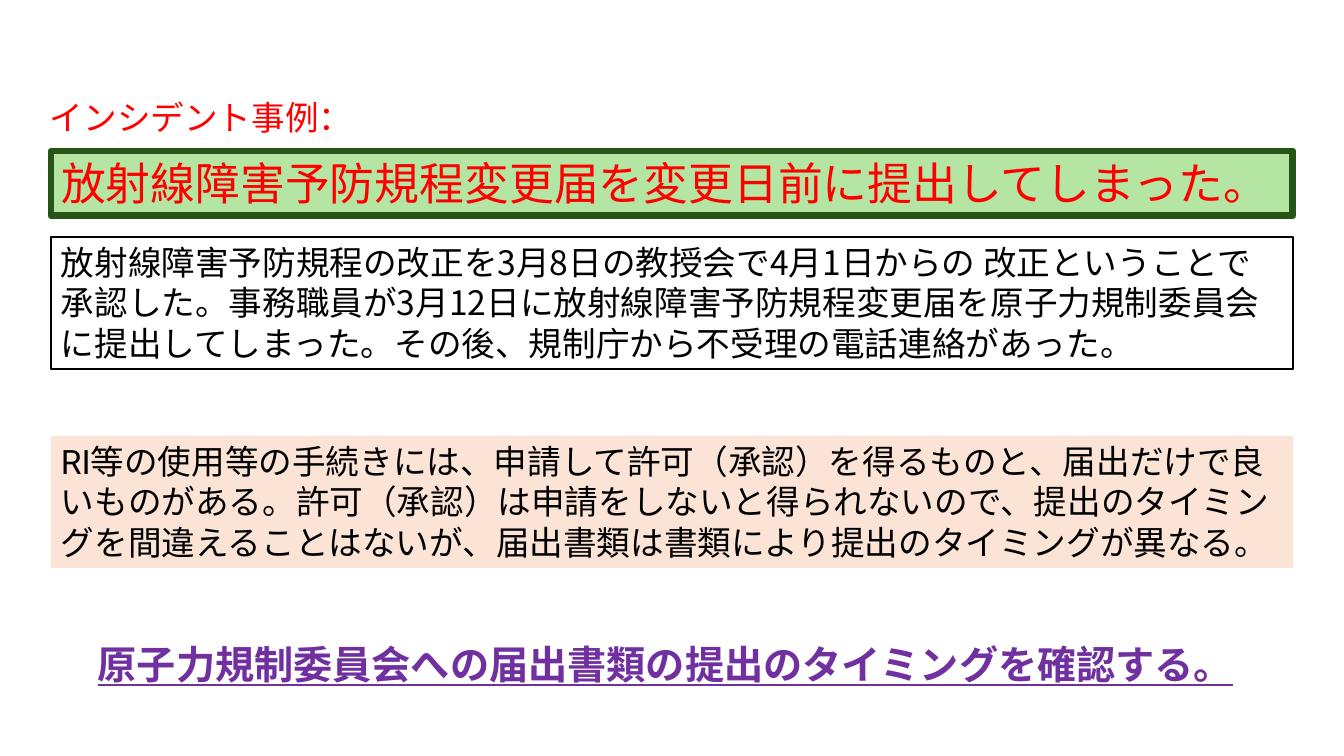
from pptx import Presentation
from pptx.dml.color import RGBColor
from pptx.enum.shapes import MSO_SHAPE
from pptx.enum.text import MSO_ANCHOR, MSO_AUTO_SIZE, PP_ALIGN
from pptx.oxml.ns import qn
from pptx.util import Emu, Pt

EMU_PER_PX = 914400 / 100.8
LINE_HEIGHT = 1.2
COLORS = {
    "alert": "FF0000",
    "headline_fill": "B4E5A2",
    "headline_edge": "275417",
    "ink": "000000",
    "advice_fill": "FBE3D6",
    "conclusion": "7030A0",
}


def px(length):
    return Emu(round(length * EMU_PER_PX))


def rgb(name):
    return RGBColor.from_string(COLORS[name])


class IncidentSlide:
    font = "Noto Sans CJK JP"

    def __init__(self, presentation):
        self.slide = presentation.slides.add_slide(presentation.slide_layouts[5])

    def set_text(self, shape, text, size, color, wrap=True, latin=font, **emphasis):
        frame = shape.text_frame
        frame_format = {
            "word_wrap": wrap,
            "auto_size": MSO_AUTO_SIZE.NONE,
            "vertical_anchor": MSO_ANCHOR.TOP,
            "margin_left": Pt(7.2),
            "margin_right": Pt(7.2),
            "margin_top": Pt(3.6),
            "margin_bottom": Pt(3.6),
        }
        for name, value in frame_format.items():
            setattr(frame, name, value)
        paragraph = frame.paragraphs[0]
        paragraph.alignment = PP_ALIGN.LEFT
        paragraph.line_spacing = Pt(size * LINE_HEIGHT)
        run = paragraph.add_run()
        run.text = text
        font_format = {"size": Pt(size), "name": latin, **emphasis}
        for name, value in font_format.items():
            setattr(run.font, name, value)
        run.font.color.rgb = rgb(color)
        # East Asian glyphs take their own typeface, listed right after latin
        properties = run.font._element
        east_asian = properties.makeelement(qn("a:ea"), {"typeface": self.font})
        properties.find(qn("a:latin")).addnext(east_asian)

    def paint(self, shape, fill, edge, edge_width):
        if fill:
            shape.fill.solid()
            shape.fill.fore_color.rgb = rgb(fill)
        else:
            shape.fill.background()
        if edge:
            shape.line.color.rgb = rgb(edge)
            shape.line.width = Pt(edge_width)
        else:
            shape.line.fill.background()

    def title(self, box, text, size, color, fill, edge, edge_width):
        headline = self.slide.shapes.title
        for name, length in zip(("left", "top", "width", "height"), box):
            setattr(headline, name, px(length))
        self.paint(headline, fill, edge, edge_width)
        self.set_text(headline, text, size, color, wrap=False)

    def label(self, box, text, size, color, **emphasis):
        label = self.slide.shapes.add_textbox(*map(px, box))
        self.set_text(label, text, size, color, wrap=False, **emphasis)

    def panel(self, box, text, size, fill=None, edge=None, edge_width=0, **font):
        panel = self.slide.shapes.add_shape(MSO_SHAPE.RECTANGLE, *map(px, box))
        panel.shadow.inherit = False
        self.paint(panel, fill, edge, edge_width)
        self.set_text(panel, text, size, "ink", **font)


def main():
    presentation = Presentation()
    presentation.slide_width, presentation.slide_height = px(1344), px(756)
    incident = IncidentSlide(presentation)
    left, width = 51, 1242

    incident.title(
        (left, 151, width, 65),
        "放射線障害予防規程変更届を変更日前に提出してしまった。",
        32, "alert", "headline_fill", "headline_edge", 5,
    )
    incident.label((40, 92, 326, 50), "インシデント事例：", 24, "alert")
    incident.panel(
        (left, 237, width, 132),
        "放射線障害予防規程の改正を3月8日の教授会で4月1日からの 改正ということで承認した。"
        "事務職員が3月12日に放射線障害予防規程変更届を原子力規制委員会に提出してしまった。"
        "その後、規制庁から不受理の電話連絡があった。",
        24, edge="ink", edge_width=1.25,
    )
    incident.panel(
        (left, 436, width, 132),
        "RI等の使用等の手続きには、申請して許可（承認）を得るものと、届出だけで良いものがある。"
        "許可（承認）は申請をしないと得られないので、提出のタイミングを間違えることはないが、"
        "届出書類は書類により提出のタイミングが異なる。",
        24, fill="advice_fill", latin="Roboto",
    )
    incident.label(
        (88, 635, 1168, 57),
        "原子力規制委員会への届出書類の提出のタイミングを確認する。",
        28, "conclusion", bold=True, underline=True,
    )
    presentation.save("out.pptx")


if __name__ == "__main__":
    main()
